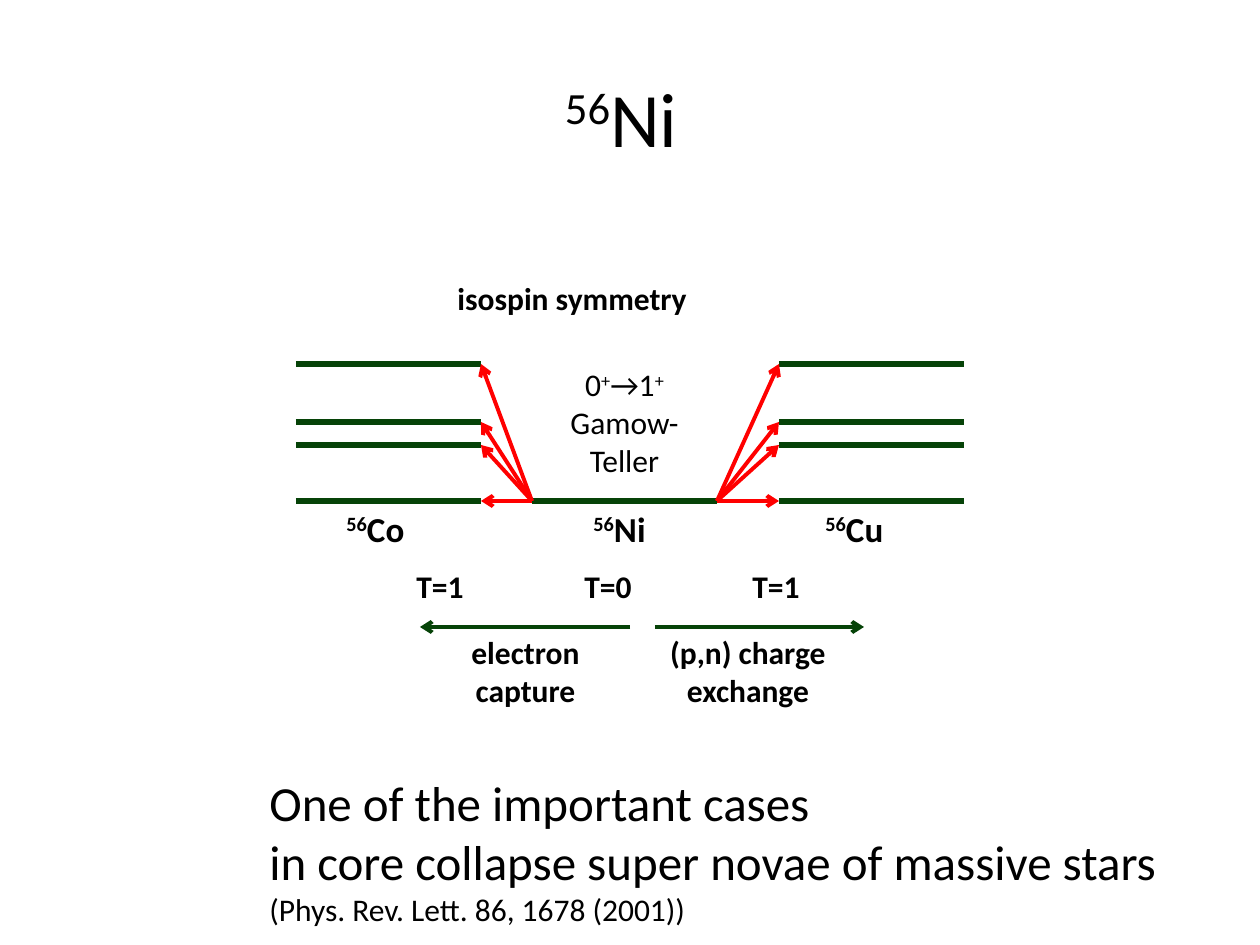
import dataclasses

import lxml.etree
import pptx
import pptx.dml.color
import pptx.enum.shapes
import pptx.enum.text
import pptx.oxml.ns
import pptx.util

EMU_PER_PX = 914400 / 126
ALIGN = pptx.enum.text.PP_ALIGN
ANCHOR = pptx.enum.text.MSO_ANCHOR


@dataclasses.dataclass(frozen=True)
class Theme:
    font: str = "Calibri"
    ink: str = "000000"
    level: str = "064308"
    transition: str = "FF0000"
    title: int = 44
    message: int = 28
    nucleus: int = 20
    label: int = 18
    level_width: float = 3
    arrow_width: float = 2.25


@dataclasses.dataclass(frozen=True)
class Box:
    left: int
    top: int
    width: int
    height: int

    def inner(self, left, top, width, height):
        return Box(self.left + left, self.top + top, width, height)


THEME = Theme()


def px(length):
    return pptx.util.Emu(round(length * EMU_PER_PX))


def colour(value):
    return pptx.dml.color.RGBColor.from_string(value)


def add_child(parent, tag, **attributes):
    return lxml.etree.SubElement(parent, pptx.oxml.ns.qn(tag), **attributes)


def add_text(shapes, box, *lines, size=THEME.label, bold=False,
             align=ALIGN.LEFT, anchor=ANCHOR.TOP, tabs=()):
    """Write one paragraph per line; text between carets is superscript.

    A line may be a (text, size) pair; tabs are px from the text's left edge.
    """
    shape = shapes.add_textbox(*map(px, dataclasses.astuple(box)))
    frame = shape.text_frame
    frame.word_wrap = True
    frame.vertical_anchor = anchor
    for index, line in enumerate(lines):
        text, points = line if isinstance(line, tuple) else (line, size)
        para = frame.add_paragraph() if index else frame.paragraphs[0]
        para.alignment = align
        if tabs:
            stops = add_child(para._p.get_or_add_pPr(), "a:tabLst")
            for stop in tabs:
                add_child(stops, "a:tab", pos=str(px(stop)), algn="l")
        for part, words in enumerate(text.split("^")):
            if not words:
                continue
            span = para.add_run()
            span.text = words
            span.font.name = THEME.font
            span.font.size = pptx.util.Pt(points)
            span.font.bold = bold
            span.font.color.rgb = colour(THEME.ink)
            if part % 2:
                span._r.get_or_add_rPr().set("baseline", "30000")


def add_line(shapes, box, start, end, line_colour, width, arrow=False):
    points = [px(box.left + start[0]), px(box.top + start[1]),
              px(box.left + end[0]), px(box.top + end[1])]
    line = shapes.add_connector(
        pptx.enum.shapes.MSO_CONNECTOR.STRAIGHT, *points)
    line.line.color.rgb = colour(line_colour)
    line.line.width = pptx.util.Pt(width)
    if arrow:
        add_child(line.line._get_or_add_ln(), "a:tailEnd", type="arrow")
    add_child(line._element.spPr, "a:effectLst")


def add_title(shapes, box):
    add_text(shapes, box, "^56^Ni ", size=THEME.title,
             align=ALIGN.CENTER, anchor=ANCHOR.MIDDLE)


def add_level_scheme(shapes, box):
    ground = 228
    excited = (91, 149, 172)
    level_length = 185
    cobalt, nickel, copper = 0, 236, 483

    # Energy levels
    levels = [(nickel, ground)]
    levels += [(left, height) for left in (cobalt, copper)
               for height in (*excited, ground)]
    for left, height in levels:
        add_line(shapes, box, (left, height), (left + level_length, height),
                 THEME.level, THEME.level_width)

    # Transitions from the nickel ground state
    for start, end in ((nickel, cobalt + level_length),
                       (nickel + level_length, copper)):
        for height in (*excited, ground):
            add_line(shapes, box, (start, ground), (end, height),
                     THEME.transition, THEME.arrow_width, arrow=True)

    # Nuclei
    for text, left, width in (("^56^Co", 38, 116), ("^56^Ni", 285, 102),
                              ("^56^Cu", 517, 116)):
        add_text(shapes, box.inner(left, ground, width, 60), text,
                 size=THEME.nucleus, bold=True)

    # Isospin and transition type
    add_text(shapes, box.inner(149, 0, 348, 55), "isospin symmetry", bold=True)
    add_text(shapes, box.inner(108, 288, 580, 55), "T=1\tT=0\tT=1",
             bold=True, tabs=(168, 336))
    add_text(shapes, box.inner(243, 86, 171, 139),
             "0^+^→1^+", "Gamow-", "Teller", align=ALIGN.CENTER)

    # Reactions
    reaction_top = 354
    for start, end, left, width, lines in (
            (334, 124, 142, 175, ("electron", "capture")),
            (359, 568, 330, 244, ("(p,n) charge", "exchange"))):
        add_line(shapes, box, (start, reaction_top), (end, reaction_top),
                 THEME.level, THEME.arrow_width, arrow=True)
        add_text(shapes, box.inner(left, reaction_top, width, 97), *lines,
                 bold=True, align=ALIGN.CENTER)


def add_message(shapes, box):
    add_text(shapes, box, "One of the important cases",
             "in core collapse super novae of massive stars",
             ("(Phys. Rev. Lett. 86, 1678 (2001))", THEME.label),
             size=THEME.message)


def main():
    deck = pptx.Presentation()
    deck.slide_width, deck.slide_height = px(1260), px(945)
    page = deck.slides.add_slide(deck.slide_layouts[6])
    add_title(page.shapes, Box(63, 38, 1134, 157))
    scheme = page.shapes.add_group_shape()
    add_level_scheme(scheme.shapes, Box(296, 273, 668, 452))
    add_message(page.shapes, Box(257, 766, 922, 229))
    deck.save("out.pptx")


if __name__ == "__main__":
    main()
